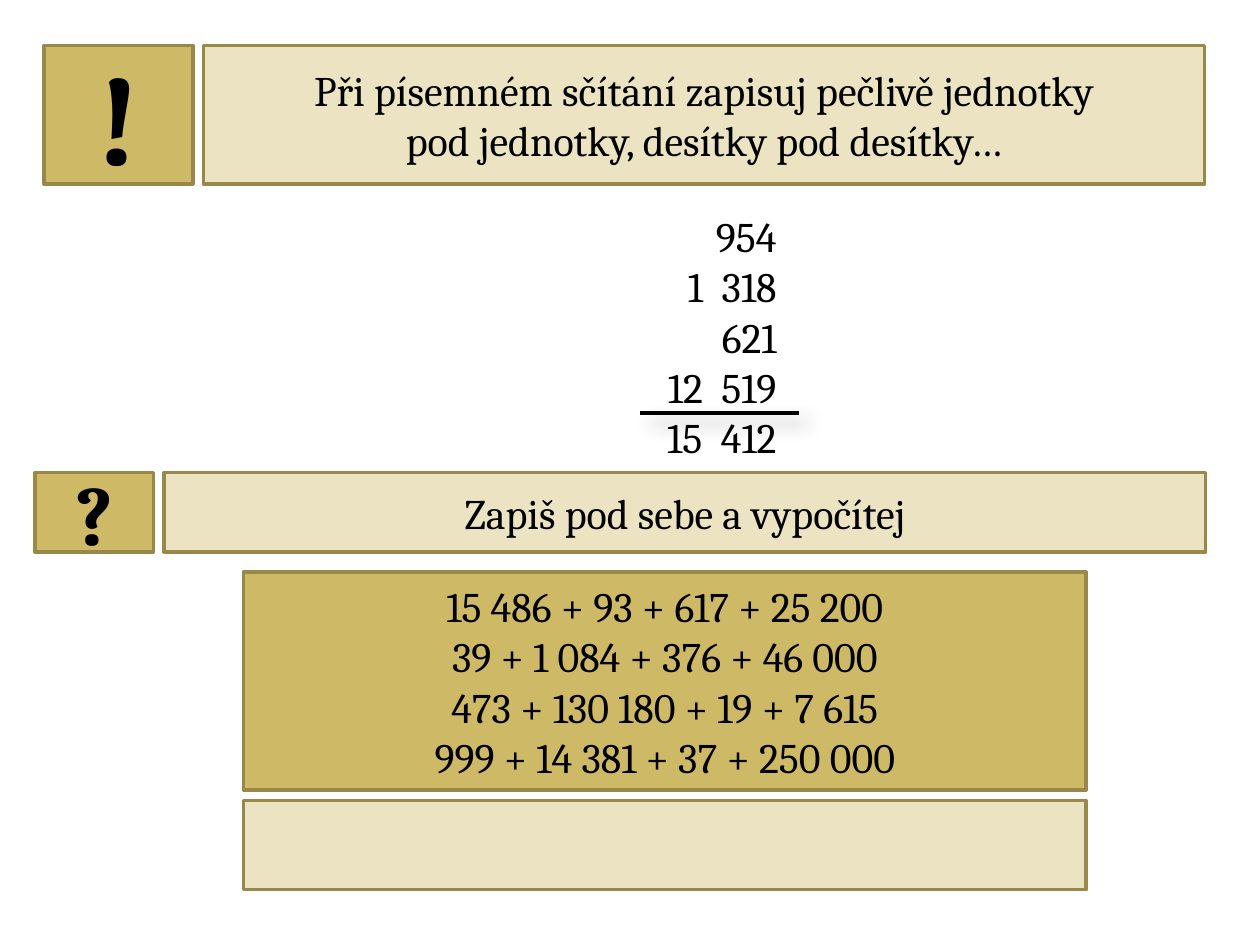
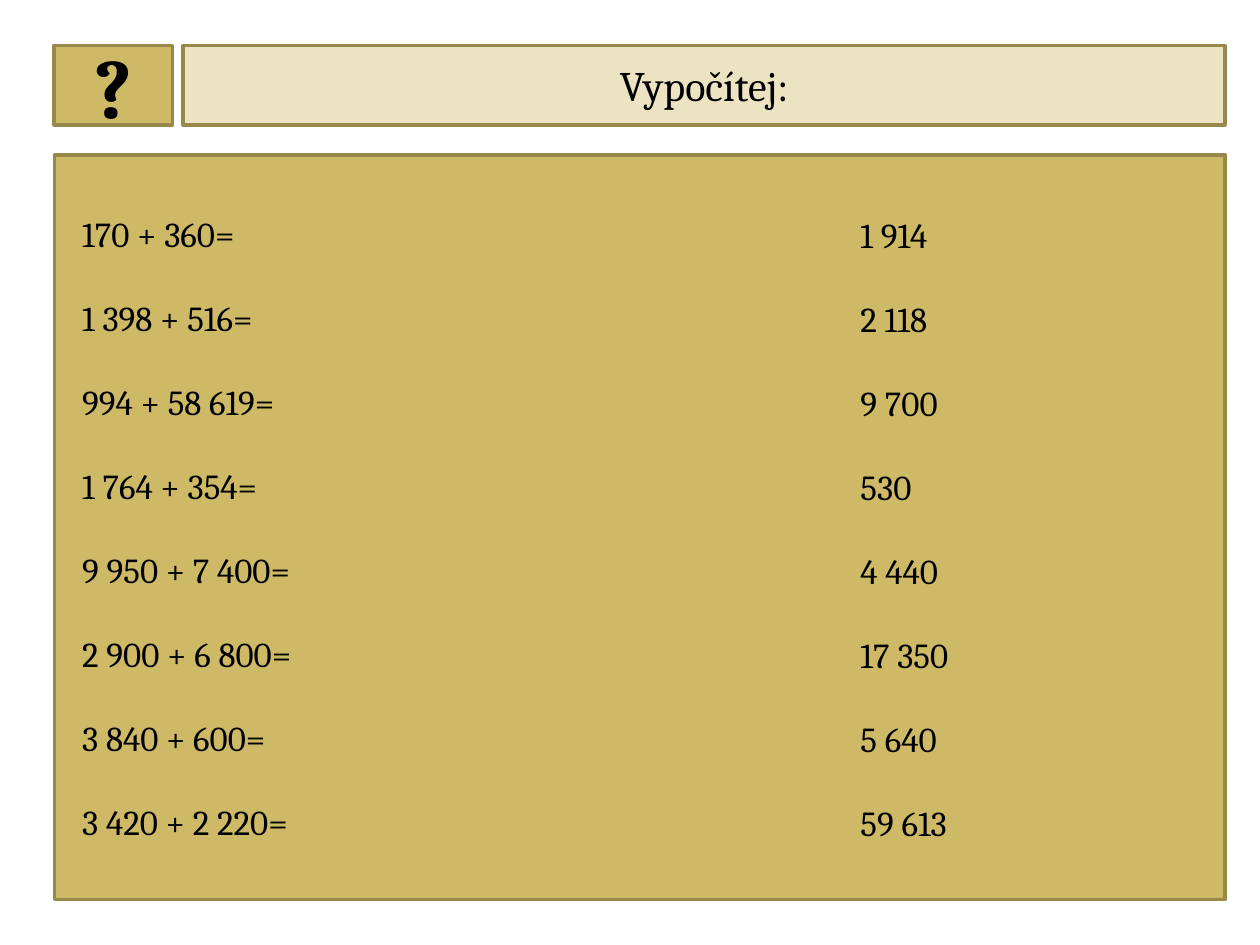
from lxml import etree
from pptx import Presentation
from pptx.dml.color import RGBColor
from pptx.enum import shapes, text
from pptx.oxml import ns
from pptx.util import Pt

GOLD = RGBColor(0xCE, 0xB9, 0x66)
CREAM = RGBColor(0xEB, 0xE3, 0xC2)
EDGE = RGBColor(0x98, 0x89, 0x4B)
BLACK = RGBColor(0, 0, 0)
FONT = "Cambria"
GAP = 6
LEFT, MID, RIGHT = text.PP_ALIGN.LEFT, text.PP_ALIGN.CENTER, text.PP_ALIGN.RIGHT


def put(para, words, size, bold=False):
    run = para.add_run()
    run.text = words
    font = run.font
    font.name, font.size, font.bold = FONT, Pt(size), bold
    font.color.rgb = BLACK
    return run


def paras(frame, count, align):
    """Yield the given number of aligned paragraphs, reusing the first one."""
    frame.word_wrap = True
    for i in range(count):
        para = frame.add_paragraph() if i else frame.paragraphs[0]
        para.alignment = align
        yield para


def write(frame, lines, size, align=MID, bold=False):
    for para, line in zip(paras(frame, len(lines), align), lines):
        put(para, line, size, bold)


def panel(slide, box, fill):
    rect = slide.shapes.add_shape(shapes.MSO_SHAPE.RECTANGLE, *map(Pt, box))
    rect.shadow.inherit = False
    rect.fill.solid()
    rect.fill.fore_color.rgb = fill
    rect.line.color.rgb = EDGE
    rect.line.width = Pt(2)
    frame = rect.text_frame
    frame.vertical_anchor = text.MSO_ANCHOR.MIDDLE
    return frame


def label(slide, box):
    return slide.shapes.add_textbox(*map(Pt, box)).text_frame


def banner(slide, box, tile, mark, size, lines):
    """Gold tile with a mark, then a cream bar filling the rest of the box."""
    x, y, wide, high = box
    write(panel(slide, (x, y, tile, high), GOLD), [mark], size, bold=True)
    skip = tile + GAP
    write(panel(slide, (x + skip, y, wide - skip, high), CREAM), lines, 24)


def rule(slide, x, y, wide):
    """Sum line with a soft shadow."""
    line = slide.shapes.add_connector(
        shapes.MSO_CONNECTOR.STRAIGHT, Pt(x), Pt(y), Pt(x + wide), Pt(y))
    line.line.color.rgb = BLACK
    line.line.width = Pt(2)
    props = line._element.spPr
    effect = etree.SubElement(props, ns.qn("a:effectLst"))
    shade = etree.SubElement(effect, ns.qn("a:outerShdw"), blurRad=str(Pt(10.2)),
                             dist=str(Pt(8)), dir=str(45 * 60000))
    tint = etree.SubElement(shade, ns.qn("a:srgbClr"), val=str(BLACK))
    etree.SubElement(tint, ns.qn("a:alpha"), val="35000")


def column(slide, box, terms):
    """Terms under each other, thousands set apart, with a line above the sum."""
    x, y, wide, high = box
    frame = label(slide, box)
    for para, term in zip(paras(frame, len(terms), RIGHT), terms):
        head, gap, tail = term.rpartition(" ")
        if gap:
            put(para, head, 24)
            put(para, gap, 24)._r.get_or_add_rPr().set("spc", "530")
        put(para, tail, 24)
    rule(slide, x + 108, y + 119.5, 90.5)


def tasks(slide, box, sums, blank):
    """Sums to work out, with an empty answer field below."""
    x, y, wide, high = box
    top = high - blank - GAP
    write(panel(slide, (x, y, wide, top), GOLD), sums, 24)
    panel(slide, (x, y + top + GAP, wide, blank), CREAM)


def match(slide, box, sums, results):
    """Sums on the left and shuffled results on the right of one panel."""
    x, y, wide, high = box
    frame = panel(slide, box, GOLD)
    frame.margin_left = Pt(16)
    write(frame, sums, 20, LEFT)
    for para in frame.paragraphs[1:]:
        para.space_before = Pt(24)
    frame = label(slide, (x + 453.6, y + 5.8, 204, 395))
    write(frame, results, 20, LEFT)
    for para in frame.paragraphs:
        para.line_spacing = 2.0


def main():
    deck = Presentation()
    deck.slide_width, deck.slide_height = Pt(720), Pt(540)
    blank = deck.slide_layouts[6]

    slide = deck.slides.add_slide(blank)
    banner(slide, (25.2, 26, 663.1, 79.2), 85, "!", 72,
           ["Při písemném sčítání zapisuj pečlivě jednotky",
            "pod jednotky, desítky pod desítky…"])
    column(slide, (257.8, 116.6, 193, 152.6),
           ["954", "1 318", "621", "12 519", "15 412"])
    banner(slide, (20, 270, 669, 45.4), 67.7, "?", 48,
           ["Zapiš pod sebe a vypočítej"])
    tasks(slide, (139, 327, 481.7, 181.4),
          ["15 486 + 93 + 617 + 25 200", "39 + 1 084 + 376 + 46 000",
           "473 + 130 180 + 19 + 7 615", "999 + 14 381 + 37 + 250 000"], 51)

    slide = deck.slides.add_slide(blank)
    banner(slide, (31, 26, 669, 45.4), 67.7, "?", 48, ["Vypočítej:"])
    match(slide, (31, 88.6, 669, 425.5),
          ["170 + 360=", "1 398 + 516=", "994 + 58 619=", "1 764 + 354=",
           "9 950 + 7 400=", "2 900 + 6 800=", "3 840 + 600=", "3 420 + 2 220="],
          ["1 914", "2 118", "9 700", "530", "4 440", "17 350", "5 640", "59 613"])

    deck.save("out.pptx")


if __name__ == "__main__":
    main()
